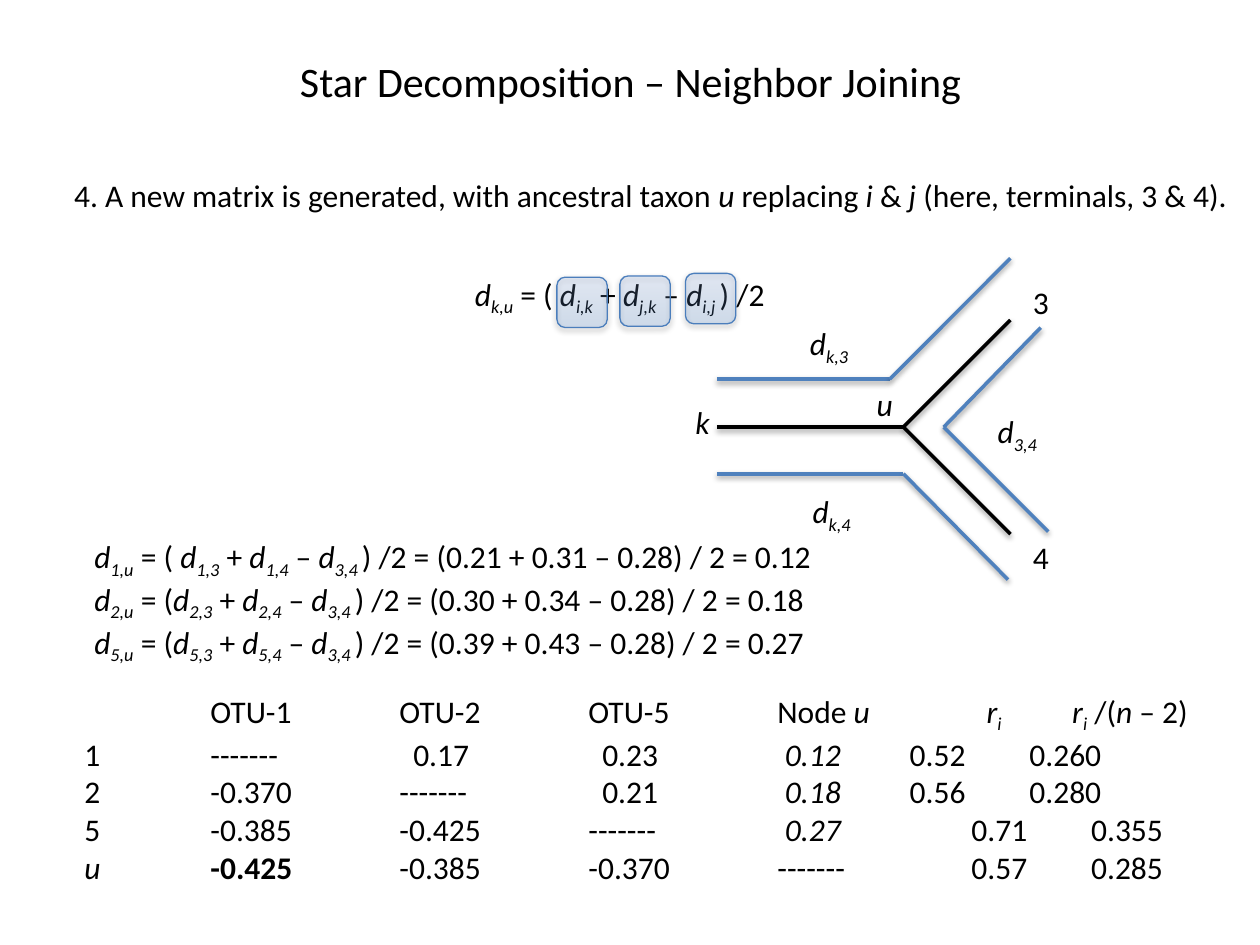
from lxml.etree import SubElement
from pptx import Presentation
from pptx.dml.color import RGBColor
from pptx.enum.shapes import MSO_CONNECTOR, MSO_SHAPE
from pptx.enum.text import MSO_AUTO_SIZE, PP_ALIGN
from pptx.oxml.ns import qn
from pptx.util import Inches, Pt

BLACK = RGBColor(0x00, 0x00, 0x00)
BLUE = RGBColor(0x4F, 0x81, 0xBD)
OUTLINE = RGBColor(0x4B, 0x7E, 0xBC)
GRADIENT = (RGBColor(0x3F, 0x80, 0xCE), RGBColor(0xA4, 0xC4, 0xFF))
FONT = "Calibri"
LINE_HEIGHT = 0.4


def write(paragraph, markup, size=18):
    """Add runs split at "|"; a leading ~ is italic, _ italic subscript, ^ bold."""
    for part in markup.split("|"):
        mark = part[0] if part[0] in "~_^" else ""
        run = paragraph.add_run()
        run.text = part[len(mark):]
        font = run.font
        font.name, font.size, font.color.rgb = FONT, Pt(size), BLACK
        font.italic = mark in ("~", "_")
        font.bold = mark == "^"
        if mark == "_":
            run._r.get_or_add_rPr().set("baseline", "-25000")


def add_text(slide, left, top, width, lines, height=LINE_HEIGHT, size=18,
             align=PP_ALIGN.LEFT):
    box = slide.shapes.add_textbox(
        Inches(left), Inches(top), Inches(width), Inches(height))
    frame = box.text_frame
    frame.word_wrap = False
    frame.auto_size = MSO_AUTO_SIZE.SHAPE_TO_FIT_TEXT
    for index, line in enumerate(lines):
        paragraph = frame.add_paragraph() if index else frame.paragraphs[0]
        paragraph.alignment = align
        write(paragraph, line, size)


def add_shadow(shape, opacity):
    effects = SubElement(shape._element.spPr, qn("a:effectLst"))
    shadow = SubElement(effects, qn("a:outerShdw"), blurRad="40000", dist="20000",
                        dir="5400000", rotWithShape="0")
    color = SubElement(shadow, qn("a:srgbClr"), val=str(BLACK))
    SubElement(color, qn("a:alpha"), val=str(opacity * 1000))


def add_path(slide, points, color):
    """Join consecutive points with straight connectors."""
    for start, end in zip(points, points[1:]):
        line = slide.shapes.add_connector(
            MSO_CONNECTOR.STRAIGHT, *(Inches(value) for value in start + end))
        line.line.color.rgb = color
        line.line.width = Pt(2)
        add_shadow(line, 38)


def add_highlight(slide, left, top, side=0.4):
    shape = slide.shapes.add_shape(MSO_SHAPE.ROUNDED_RECTANGLE, Inches(left),
                                   Inches(top), Inches(side), Inches(side))
    shape.fill.gradient()
    shape.fill.gradient_angle = 90
    for stop, color in zip(shape.fill.gradient_stops, GRADIENT):
        stop.color.rgb = color
    for color in shape._element.spPr.iter(qn("a:srgbClr")):
        SubElement(color, qn("a:alpha"), val="18000")
    shape.line.color.rgb = OUTLINE
    shape.line.width = Pt(0.75)
    add_shadow(shape, 35)


def add_formula(slide, left, top):
    add_text(slide, left, top, 2.65, [
        "~d|_k,u| = ( |~d|_i,k| + |~d|_j,k| – |~d|_i,j |) /2"])
    for offset_x, offset_y in ((0.75, 0.07), (1.25, 0.06), (1.77, 0.04)):
        add_highlight(slide, left + offset_x, top + offset_y)


def add_tree(slide, left, top):
    """Draw the three-branch tree and its distance paths from the top left corner."""
    def place(*points):
        return [(left + x, top + y) for x, y in points]

    node = (1.75, 1.34)
    add_path(slide, place((0.27, 1.34), node, (2.6, 0.49)), BLACK)
    add_path(slide, place(node, (2.6, 2.19)), BLACK)
    for distance_path in (
            ((0.27, 0.96), (1.64, 0.96), (2.6, 0)),
            ((0.27, 1.71), (1.75, 1.71), (2.58, 2.55)),
            ((2.84, 0.55), (2.07, 1.34), (2.9, 2.17))):
        add_path(slide, place(*distance_path), BLUE)
    for x, y, width, label in (
            (2.68, 0.15, 0.33, "3"), (2.68, 2.17, 0.33, "4"),
            (1.44, 0.96, 0.39, "~u"), (0, 1.1, 0.38, "~k"),
            (0.91, 0.47, 0.58, "~d|_k,3"), (0.93, 1.81, 0.58, "~d|_k,4"),
            (2.4, 1.17, 0.59, "~d|_3,4")):
        add_text(slide, left + x, top + y, width, [label])


def add_calculations(slide, left, top, width, height):
    rows = ((1, "( ", "0.21 + 0.31", "0.12"),
            (2, "(", "0.30 + 0.34", "0.18"),
            (5, "(", "0.39 + 0.43", "0.27"))
    add_text(slide, left, top, width, [
        f"~d|_{taxon},u| = {opening}|~d|_{taxon},3| + |~d|_{taxon},4| – |~d|_3,4 |"
        f") /2 = ({total} – 0.28) / 2 = {result}"
        for taxon, opening, total, result in rows], height)


def add_matrix(slide, left, top):
    widths = (1, 1.5, 1.5, 1.5, 1.05, 0.95, 1.4)
    heights = (0.34,) + (0.3,) * 4
    rows = (
        ("", "OTU-1", "OTU-2", "OTU-5", "Node |~u", "~r|_i", "~r|_i| /(|~n| – 2)"),
        ("1", "-------", "0.17", "0.23", "~0.12", "0.52", "0.260"),
        ("2", "-0.370", "-------", "0.21", "~0.18", "0.56", "0.280"),
        ("5", "-0.385", "-0.425", "-------", "~0.27", "0.71", "0.355"),
        ("~u", "^-0.425", "-0.385", "-0.370", "-------", "0.57", "0.285"))
    # Indents of the last two columns, row by row
    sum_indents = ((0.61, 0.34), (0, 0), (0, 0), (0.49, 0.49), (0.49, 0.49))
    table = slide.shapes.add_table(
        len(rows), len(widths), Inches(left), Inches(top),
        Inches(sum(widths)), Inches(sum(heights))).table
    table.first_row = table.horz_banding = False
    for column, width in zip(table.columns, widths):
        column.width = Inches(width)
    for row_index, values in enumerate(rows):
        table.rows[row_index].height = Inches(heights[row_index])
        for column_index, value in enumerate(values):
            cell = table.cell(row_index, column_index)
            cell.fill.background()
            cell.margin_right = cell.margin_top = cell.margin_bottom = 0
            if column_index >= 5:
                indent = sum_indents[row_index][column_index - 5]
            elif value.startswith("0."):
                indent = 0.11
            else:
                indent = 0.06 if value.startswith("~0.") else 0
            cell.margin_left = Inches(indent)
            paragraph = cell.text_frame.paragraphs[0]
            paragraph.font.size = Pt(18)
            if value:
                write(paragraph, value)


def main():
    presentation = Presentation()
    presentation.slide_width, presentation.slide_height = Inches(10), Inches(7.5)
    slide = presentation.slides.add_slide(presentation.slide_layouts[6])
    add_text(slide, 2.25, 0.39, 5.51, ["Star Decomposition – Neighbor Joining"],
             height=0.5, size=24, align=PP_ALIGN.CENTER)
    add_text(slide, 0.49, 1.35, 9.46, [
        "4. A new matrix is generated, with ancestral taxon |~u| replacing |~i |&|~ j |"
        "(here, terminals, 3 & 4)."])
    add_formula(slide, 3.67, 2.13)
    add_tree(slide, 5.42, 2.05)
    add_calculations(slide, 0.65, 4.21, 6.11, 1.01)
    add_matrix(slide, 0.67, 5.5)
    presentation.save("out.pptx")


if __name__ == "__main__":
    main()
